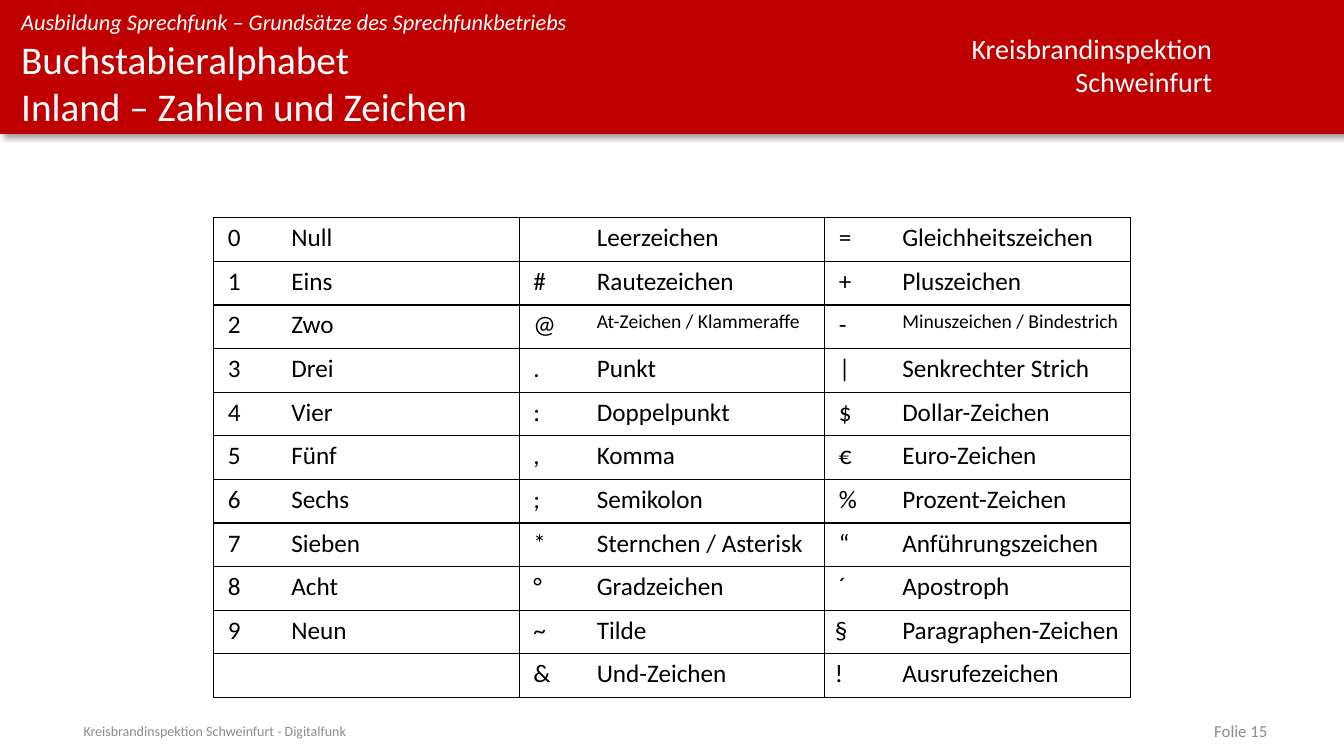
from lxml import etree
from pptx import Presentation
from pptx import util as u
from pptx.dml import color
from pptx.enum import shapes, text
from pptx.oxml import ns

COLORS = {"band": "C00000", "white": "FFFFFF", "black": "000000", "footer": "8C8C8C"}
FONT = "Calibri"
LEFT, RIGHT = text.PP_ALIGN.LEFT, text.PP_ALIGN.RIGHT
TOP, MIDDLE = text.MSO_ANCHOR.TOP, text.MSO_ANCHOR.MIDDLE

SIGNS = [
    [("0", "Null"), ("", "Leerzeichen"), ("=", "Gleichheitszeichen")],
    [("1", "Eins"), ("#", "Rautezeichen"), ("+", "Pluszeichen")],
    [("2", "Zwo"), ("@", "At-Zeichen / Klammeraffe"), ("-", "Minuszeichen / Bindestrich")],
    [("3", "Drei"), (".", "Punkt"), ("|", "Senkrechter Strich")],
    [("4", "Vier"), (":", "Doppelpunkt"), ("$", "Dollar-Zeichen")],
    [("5", "Fünf"), (",", "Komma"), ("€", "Euro-Zeichen")],
    [("6", "Sechs"), (";", "Semikolon"), ("%", "Prozent-Zeichen")],
    [("7", "Sieben"), ("*", "Sternchen / Asterisk"), ("“", "Anführungszeichen")],
    [("8", "Acht"), ("°", "Gradzeichen"), ("´", "Apostroph")],
    [("9", "Neun"), ("~", "Tilde"), ("§", "Paragraphen-Zeichen")],
    [("", ""), ("&", "Und-Zeichen"), ("!", "Ausrufezeichen")],
]
SMALL_WORDS = {"At-Zeichen / Klammeraffe", "Minuszeichen / Bindestrich"}
FLUSH_SIGNS = {"§", "!"}


def inches(*lengths):
    """Turn numbers into lengths."""
    return [u.Inches(length) for length in lengths]


def write(frame, words, size=18, ink="black", italic=False, align=LEFT, indent=0):
    """Fill a text frame with one paragraph per line of words."""
    frame.text = words
    for para in frame.paragraphs:
        para.alignment = align
        if indent:
            properties = para._p.get_or_add_pPr()
            properties.set("marL", str(u.Inches(indent)))
            properties.set("indent", "0")
        for span in para.runs:
            span.font.name = FONT
            span.font.size = u.Pt(size)
            span.font.italic = italic
            span.font.color.rgb = color.RGBColor.from_string(COLORS[ink])


def set_frame(frame, anchor=TOP, inset=True, wrap=True):
    """Set the anchor, margins and wrapping of a text frame."""
    frame.auto_size = text.MSO_AUTO_SIZE.NONE
    frame.vertical_anchor = anchor
    frame.word_wrap = wrap
    if not inset:
        frame.margin_left = frame.margin_right = 0
        frame.margin_top = frame.margin_bottom = 0


def add_label(page, box, words, anchor=TOP, inset=True, wrap=True, **style):
    """Add a text box."""
    frame = page.shapes.add_textbox(*inches(*box)).text_frame
    set_frame(frame, anchor, inset, wrap)
    write(frame, words, **style)


def add_shadow(shape):
    """Give a shape a soft shadow falling down and to the right."""
    shape.shadow.inherit = False
    effects = shape._element.spPr.find(ns.qn("a:effectLst"))
    shadow = etree.SubElement(effects, ns.qn("a:outerShdw"), blurRad=str(u.Pt(4)),
                              dist=str(u.Pt(3)), dir="2700000", algn="tl", rotWithShape="0")
    tint = etree.SubElement(shadow, ns.qn("a:srgbClr"), val=COLORS["black"])
    etree.SubElement(tint, ns.qn("a:alpha"), val="40000")


def add_header(page, box):
    """Build the red band with topic, title and organisation."""
    left, top, width, height = box
    band = page.shapes.add_shape(shapes.MSO_SHAPE.RECTANGLE, *inches(*box))
    band.fill.solid()
    band.fill.fore_color.rgb = color.RGBColor.from_string(COLORS["band"])
    band.line.fill.background()
    add_shadow(band)
    title = page.shapes.title
    band._element.addnext(title._element)
    title.left, title.top, title.width, title.height = inches(
        left + 0.21, top + 0.35, 8.43, height - 0.34)
    set_frame(title.text_frame, inset=False)
    write(title.text_frame, "Buchstabieralphabet\vInland – Zahlen und Zeichen",
          size=28, ink="white")
    add_label(page, (left + 0.21, top + 0.08, 8.43, 0.27),
              "Ausbildung Sprechfunk – Grundsätze des Sprechfunkbetriebs",
              inset=False, size=16, ink="white", italic=True)
    add_label(page, (left + width - 3.82, top + 0.26, 2.61, 0.77),
              "Kreisbrandinspektion\nSchweinfurt",
              wrap=False, size=20, ink="white", align=RIGHT)


def set_borders(cell, sides):
    """Draw black lines on the named sides of a cell and none on the rest."""
    properties = cell._tc.get_or_add_tcPr()
    for side in "LRTB":
        line = etree.SubElement(properties, ns.qn("a:ln" + side), w=str(u.Pt(1)))
        if side in sides:
            fill = etree.SubElement(line, ns.qn("a:solidFill"))
            etree.SubElement(fill, ns.qn("a:srgbClr"), val=COLORS["black"])
        else:
            etree.SubElement(line, ns.qn("a:noFill"))
    cell.fill.background()


def add_sign_table(page, box):
    """Build the table of signs and their spoken names."""
    height = box[3]
    groups = len(SIGNS[0])
    table = page.shapes.add_table(len(SIGNS), 2 * groups, *inches(*box)).table
    table.first_row = table.horz_banding = False
    for index, column in enumerate(table.columns):
        column.width = u.Inches(2.36 if index % 2 else 0.67)
    for row, entries in enumerate(SIGNS):
        table.rows[row].height = u.Inches(height / len(SIGNS))
        for group, (sign, word) in enumerate(entries):
            sign_cell = table.cell(row, 2 * group)
            word_cell = table.cell(row, 2 * group + 1)
            write(sign_cell.text_frame, sign, indent=0 if sign in FLUSH_SIGNS else 0.04)
            write(word_cell.text_frame, word, size=14 if word in SMALL_WORDS else 18)
            set_borders(sign_cell, "LTB")
            set_borders(word_cell, "RTB")


def add_footer(page, box):
    """Place the footer text and the slide number at the two ends of a strip."""
    left, top, width, height = box
    add_label(page, (left, top, 8.05, height), "Kreisbrandinspektion Schweinfurt - Digitalfunk",
              anchor=MIDDLE, size=10, ink="footer")
    add_label(page, (left + width - 3.11, top, 3.11, height), "Folie 15",
              anchor=MIDDLE, size=12, ink="footer", align=RIGHT)


def main():
    """Build and save the deck."""
    deck = Presentation()
    deck.slide_width, deck.slide_height = inches(13.33, 7.5)
    page = deck.slides.add_slide(deck.slide_layouts.get_by_name("Title Only"))
    add_header(page, (0, 0, 13.33, 1.33))
    add_footer(page, (0.73, 7.15, 11.94, 0.2))
    add_sign_table(page, (2.12, 2.16, 9.09, 4.76))
    deck.save("out.pptx")


if __name__ == "__main__":
    main()
